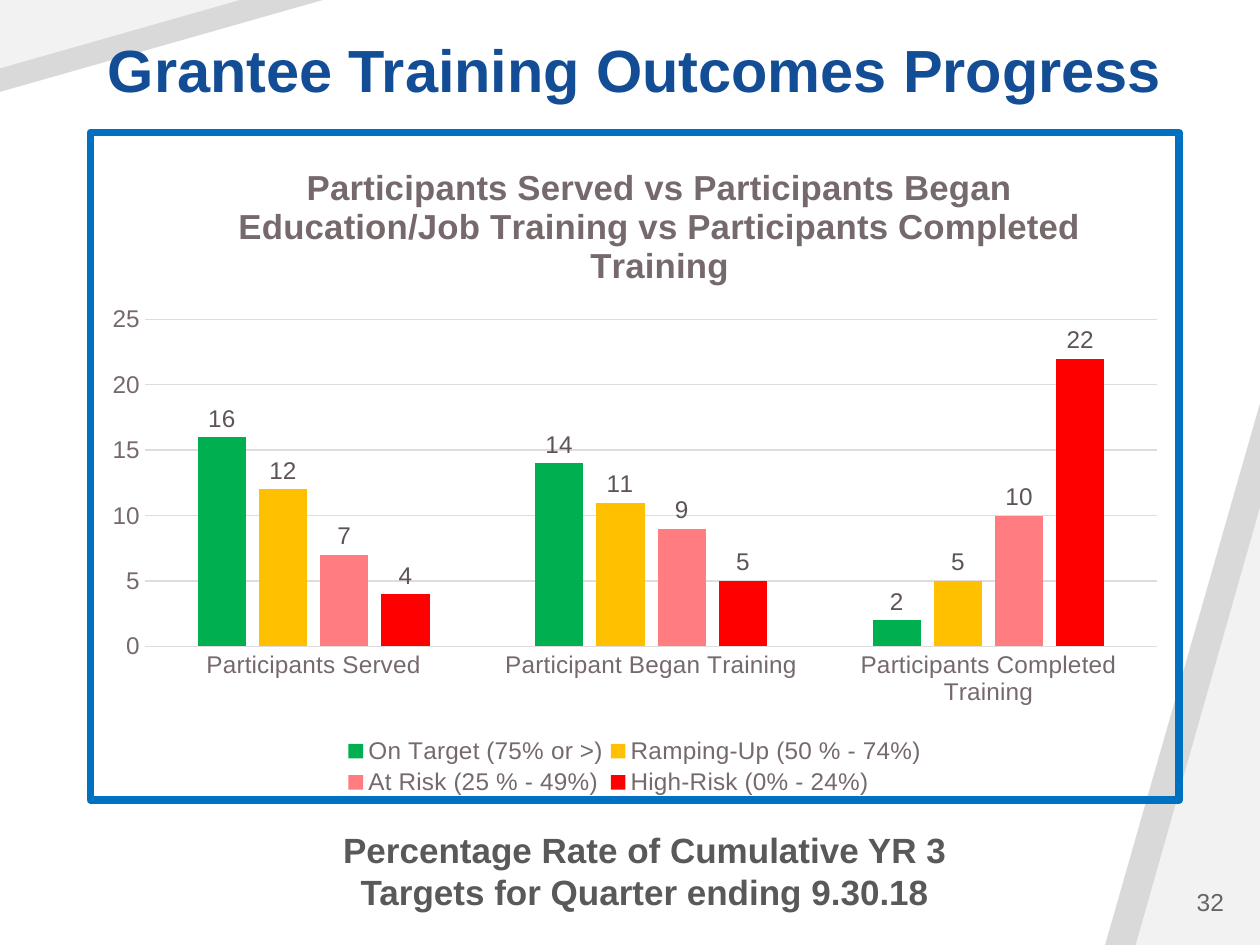
from pptx import Presentation
from pptx.chart.data import CategoryChartData
from pptx.dml.color import RGBColor
from pptx.enum.chart import XL_CHART_TYPE, XL_LABEL_POSITION, XL_LEGEND_POSITION, XL_TICK_MARK
from pptx.enum.shapes import MSO_SHAPE
from pptx.enum.text import MSO_ANCHOR, PP_ALIGN
from pptx.oxml import parse_xml
from pptx.oxml.ns import nsdecls
from pptx.util import Pt

FONT = "Arial"
CATEGORIES = ["Participants Served", "Participant Began Training", "Participants Completed Training"]
RATINGS = [
    ("On Target (75% or >)", (16, 14, 2), "00B050"),
    ("Ramping-Up (50 % - 74%)", (12, 11, 5), "FFC000"),
    ("At Risk (25 % - 49%)", (7, 9, 10), "FF7C80"),
    ("High-Risk (0% - 24%)", (4, 5, 22), "FF0000"),
]


def color(value):
    """Turn a hex string into a colour."""
    return RGBColor.from_string(value)


def set_font(font, size, value, bold=False):
    """Apply the slide's typeface with a size, colour and weight."""
    font.name, font.size, font.bold = FONT, Pt(size), bold
    font.color.rgb = color(value)


def set_line(line, value, width):
    """Give a line a solid colour and a width."""
    line.color.rgb = color(value)
    line.width = Pt(width)


def add_corner(slide, left, top, width, height, fill, rotation=0):
    """Add a right-angled corner triangle."""
    corner = slide.shapes.add_shape(
        MSO_SHAPE.ISOSCELES_TRIANGLE, Pt(left), Pt(top), Pt(width), Pt(height))
    corner.adjustments[0] = 1
    corner.rotation = rotation
    corner.shadow.inherit = False
    corner.fill.solid()
    corner.fill.fore_color.rgb = color(fill)
    corner.line.fill.background()


def add_background(slide, width, height):
    """Place the layered triangles in two opposite corners."""
    for fill, right_size, left_size in (
            ("D9D9D9", (88.5, 309.5), (184.5, 52.5)),
            ("F2F2F2", (71, 250), (137, 39))):
        add_corner(slide, width - right_size[0], height - right_size[1], *right_size, fill)
        add_corner(slide, 0, 0, *left_size, fill, 180)


def add_text(slide, left, top, width, height, text, size, value,
             bold=False, align=PP_ALIGN.CENTER, anchor=MSO_ANCHOR.TOP, spacing=1.0):
    """Add a wrapped one-paragraph text box."""
    frame = slide.shapes.add_textbox(Pt(left), Pt(top), Pt(width), Pt(height)).text_frame
    frame.word_wrap = True
    frame.vertical_anchor = anchor
    paragraph = frame.paragraphs[0]
    paragraph.text = text
    paragraph.alignment = align
    paragraph.line_spacing = spacing
    set_font(paragraph.runs[0].font, size, value, bold)


def set_layout(parent, index, inner=False, **fractions):
    """Fix a chart part at fractions of the chart area."""
    for old in parent.xpath("c:layout"):
        parent.remove(old)
    target = '<c:layoutTarget val="inner"/>' if inner else ""
    modes = '<c:xMode val="edge"/><c:yMode val="edge"/>'
    values = "".join(f'<c:{key} val="{value}"/>' for key, value in fractions.items())
    parent.insert(index, parse_xml(
        f'<c:layout {nsdecls("c")}><c:manualLayout>{target}{modes}{values}'
        '</c:manualLayout></c:layout>'))


def add_border(chart, value, width):
    """Outline the whole chart area."""
    chart.element.xpath("c:chart")[0].addnext(parse_xml(
        f'<c:spPr {nsdecls("c", "a")}><a:noFill/><a:ln w="{Pt(width)}"><a:solidFill>'
        f'<a:srgbClr val="{value}"/></a:solidFill></a:ln></c:spPr>'))


def style_axes(chart):
    """Style the axes and gridlines."""
    for axis in (chart.category_axis, chart.value_axis):
        axis.major_tick_mark = axis.minor_tick_mark = XL_TICK_MARK.NONE
        set_font(axis.tick_labels.font, 14, "76696C")
    set_line(chart.category_axis.format.line, "E0DCDD", 0.75)
    scale = chart.value_axis
    scale.minimum_scale, scale.maximum_scale, scale.major_unit = 0, 25, 5
    scale.format.line.fill.background()
    set_line(scale.major_gridlines.format.line, "E0DCDD", 0.75)


def style_series(plot):
    """Colour and label each rating's columns."""
    plot.gap_width, plot.overlap = 219, -27
    plot.vary_by_categories = False
    for series, (_, _, fill) in zip(plot.series, RATINGS):
        series.format.fill.solid()
        series.format.fill.fore_color.rgb = color(fill)
        labels = series.data_labels
        labels.show_value = True
        labels.position = XL_LABEL_POSITION.OUTSIDE_END
        set_font(labels.font, 14, "5E5457")


def add_outcomes_chart(slide, left, top, width, height):
    """Add the framed column chart of training outcomes."""
    data = CategoryChartData()
    data.categories = CATEGORIES
    for name, values, _ in RATINGS:
        data.add_series(name, values)
    chart = slide.shapes.add_chart(
        XL_CHART_TYPE.COLUMN_CLUSTERED, Pt(left), Pt(top), Pt(width), Pt(height), data).chart
    set_font(chart.font, 14, "242021")
    heading = chart.chart_title.text_frame
    heading.text = ("Participants Served vs Participants Began Education/Job Training "
                    "vs Participants Completed Training")
    set_font(heading.paragraphs[0].runs[0].font, 20, "76696C", True)
    chart.has_legend = True
    chart.legend.position = XL_LEGEND_POSITION.BOTTOM
    chart.legend.include_in_layout = False
    set_font(chart.legend.font, 14, "76696C")
    style_axes(chart)
    style_series(chart.plots[0])
    add_border(chart, "0070C0", 4.5)
    body = chart.element.xpath("c:chart")[0]
    set_layout(body.xpath("c:title")[0], 1, x=0.13, y=0.04)
    set_layout(body.xpath("c:plotArea")[0], 0, True, x=0.05, y=0.28, w=0.93, h=0.49)
    set_layout(body.xpath("c:legend")[0], 1, x=0.23, y=0.9, w=0.54, h=0.1)


def main():
    """Build and save the slide."""
    deck = Presentation()
    width, height = 720, 540
    deck.slide_width, deck.slide_height = Pt(width), Pt(height)
    slide = deck.slides.add_slide(deck.slide_layouts[6])
    add_background(slide, width, height)
    add_text(slide, 49.5, 8, 626.5, 55.5, "Grantee Training Outcomes Progress",
             34, "124D95", True, anchor=MSO_ANCHOR.BOTTOM, spacing=0.9)
    add_text(slide, 605.5, 500.5, 101, 29, "32", 14, "646464",
             align=PP_ALIGN.RIGHT, anchor=MSO_ANCHOR.MIDDLE)
    add_outcomes_chart(slide, 49.5, 73.5, 626.5, 386)
    add_text(slide, 172, 470, 393, 55.5,
             "Percentage Rate of Cumulative YR 3 Targets for Quarter ending 9.30.18",
             20, "595959", True)
    deck.save("out.pptx")


if __name__ == "__main__":
    main()
